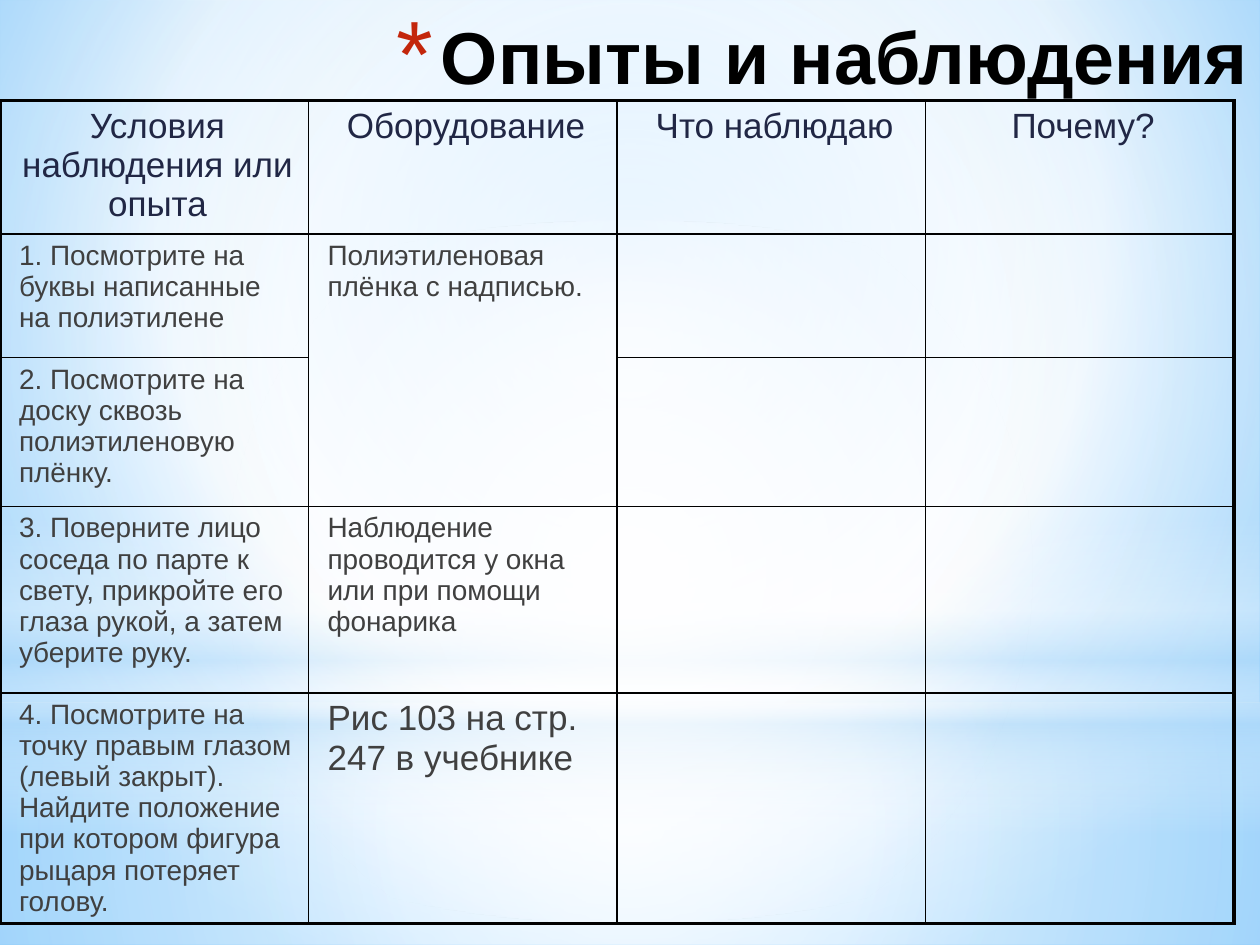
from lxml import etree
from pptx import Presentation
from pptx.dml.color import RGBColor
from pptx.enum.shapes import MSO_SHAPE
from pptx.enum.text import MSO_ANCHOR, PP_ALIGN
from pptx.oxml.ns import qn
from pptx.util import Cm, Pt

RECTANGLE, OVAL = MSO_SHAPE.RECTANGLE, MSO_SHAPE.OVAL
LEFT, CENTER, RIGHT = PP_ALIGN.LEFT, PP_ALIGN.CENTER, PP_ALIGN.RIGHT
BOTTOM = MSO_ANCHOR.BOTTOM

BLACK = RGBColor(0x00, 0x00, 0x00)
NAVY = RGBColor(0x21, 0x27, 0x45)
GRAY = RGBColor(0x40, 0x40, 0x40)
RED = RGBColor(0xC3, 0x26, 0x0C)
WHITE = RGBColor(0xFF, 0xFF, 0xFF)
PALE_BLUE = RGBColor(0xB4, 0xDC, 0xFA)
SKY = RGBColor(0x9E, 0xD5, 0xFF)
DEEP_SKY = RGBColor(0x5B, 0xB9, 0xFF)

# Content
TITLE = "Опыты и наблюдения"
ROWS = [
    ["Условия наблюдения или опыта", "Оборудование", "Что наблюдаю", "Почему?"],
    ["1. Посмотрите на буквы написанные на полиэтилене",
     "Полиэтиленовая плёнка с надписью.", "", ""],
    ["2. Посмотрите на доску сквозь полиэтиленовую плёнку.", "", "", ""],
    ["3. Поверните лицо соседа по парте к свету, прикройте его глаза рукой, "
     "а затем уберите руку.",
     "Наблюдение проводится у окна или при помощи фонарика", "", ""],
    ["4. Посмотрите на точку правым глазом (левый закрыт). Найдите положение "
     "при котором фигура рыцаря потеряет голову.",
     "Рис 103 на стр. 247 в учебнике", "", ""],
]
LARGE_TEXT_CELL = (4, 1)

# Layout, in centimetres
SLIDE_WIDTH, SLIDE_HEIGHT = 25.4, 19.05
TABLE_TOP, COLUMN_WIDTH = 2.03, 6.22
ROW_HEIGHTS = [2.69, 2.49, 3, 3.76, 4.62]
INNER_LINE, OUTER_LINE = 1, 2.25

# Gradients: stops are (position %, colour, opacity %)
CENTRE = (50, 50, 50, 50)
BACKGROUND_STOPS = [(0, SKY, 100), (60, WHITE, 100), (100, DEEP_SKY, 100)]
BACKGROUND_FOCUS = (20, 10, 20, 60)
BACKDROPS = [  # preset, top, height, focus (None = vertical), stops
    (RECTANGLE, 14.17, 4.88, CENTRE,
     [(0, WHITE, 91), (37, WHITE, 76), (100, PALE_BLUE, 79)]),
    (RECTANGLE, 0, 14.17, CENTRE,
     [(0, WHITE, 89), (48, WHITE, 62), (100, PALE_BLUE, 79)]),
    (RECTANGLE, 10.46, 6.35, None,
     [(0, WHITE, 0), (29, WHITE, 30), (45, PALE_BLUE, 40),
      (55, WHITE, 26), (65, PALE_BLUE, 60), (100, WHITE, 0)]),
    (OVAL, 4.45, 14.17, CENTRE, [(0, WHITE, 100), (56, WHITE, 0)]),
]


def add_element(parent, tag, **attributes):
    element = etree.SubElement(parent, qn(tag))
    for name, value in attributes.items():
        element.set(name, str(value))
    return element


def apply_gradient(fill, properties, stops, focus):
    """Replace the solid fill in properties by a gradient."""
    fill.solid()
    gradient = etree.Element(qn("a:gradFill"), rotWithShape="1")
    stop_list = add_element(gradient, "a:gsLst")
    for position, color, opacity in stops:
        stop = add_element(stop_list, "a:gs", pos=position * 1000)
        color_element = add_element(stop, "a:srgbClr", val=color)
        add_element(color_element, "a:alpha", val=opacity * 1000)
    if focus:
        circle = add_element(gradient, "a:path", path="circle")
        sides = {side: value * 1000 for side, value in zip("ltrb", focus)}
        add_element(circle, "a:fillToRect", **sides)
    else:
        add_element(gradient, "a:lin", ang=90 * 60000, scaled=0)
    properties.replace(properties.find(qn("a:solidFill")), gradient)


def set_font(font, **values):
    color = values.pop("color")
    for name, value in values.items():
        setattr(font, name, value)
    font.color.rgb = color


def set_borders(cell, widths):
    properties = cell._tc.get_or_add_tcPr()
    for index, (side, width) in enumerate(widths.items()):
        line = etree.Element(qn(f"a:ln{side}"), w=str(int(Pt(width))))
        solid = add_element(line, "a:solidFill")
        add_element(solid, "a:srgbClr", val=BLACK)
        properties.insert(index, line)


presentation = Presentation()
presentation.slide_width, presentation.slide_height = Cm(SLIDE_WIDTH), Cm(SLIDE_HEIGHT)
slide = presentation.slides.add_slide(presentation.slide_layouts[5])

# Background and light effects
background_fill = slide.background.fill
background_fill.solid()
apply_gradient(background_fill, slide.element.find(".//" + qn("p:bgPr")),
               BACKGROUND_STOPS, BACKGROUND_FOCUS)
for preset, top, height, focus, stops in BACKDROPS:
    shape = slide.shapes.add_shape(preset, 0, Cm(top), Cm(SLIDE_WIDTH), Cm(height))
    shape.shadow.inherit = False
    shape.line.fill.background()
    apply_gradient(shape.fill, shape.element.spPr, stops, focus)

# Title with an asterisk bullet, brought in front of the light effects
title = slide.shapes.title
title.element.getparent().append(title.element)
title.left, title.top, title.width, title.height = Cm(7.32), 0, Cm(18.08), Cm(2.13)
title.text_frame.text = TITLE
title.text_frame.word_wrap = True
title.text_frame.vertical_anchor = BOTTOM
paragraph = title.text_frame.paragraphs[0]
paragraph.alignment = RIGHT
properties = paragraph._p.get_or_add_pPr()
properties.set("marL", str(Cm(0.89)))
properties.set("indent", str(-Cm(0.89)))
add_element(add_element(properties, "a:buClr"), "a:srgbClr", val=RED)
add_element(properties, "a:buSzPct", val=128000)
add_element(properties, "a:buFont", typeface="Arial")
add_element(properties, "a:buChar", char="*")
set_font(paragraph.runs[0].font, name="Arial", size=Pt(42), bold=True, color=BLACK)

# Table
row_count, column_count = len(ROWS), len(ROWS[0])
table = slide.shapes.add_table(
    row_count, column_count, 0, Cm(TABLE_TOP),
    Cm(COLUMN_WIDTH * column_count), Cm(sum(ROW_HEIGHTS))).table
table.first_row = table.horz_banding = False
for column in table.columns:
    column.width = Cm(COLUMN_WIDTH)
for row, height in zip(table.rows, ROW_HEIGHTS):
    row.height = Cm(height)
table.cell(1, 1).merge(table.cell(2, 1))

for row_index, texts in enumerate(ROWS):
    header = row_index == 0
    for column_index, text in enumerate(texts):
        cell = table.cell(row_index, column_index)
        cell.fill.background()
        on_edge = {"L": column_index == 0, "R": column_index == column_count - 1,
                   "T": header, "B": row_index == row_count - 1}
        set_borders(cell, {side: OUTER_LINE if edge else INNER_LINE
                           for side, edge in on_edge.items()})
        if not text:
            continue
        cell.text = text
        paragraph = cell.text_frame.paragraphs[0]
        paragraph.alignment = CENTER if header else LEFT
        paragraph._p.get_or_add_pPr().set("marL", str(Cm(0.13)))
        large = header or (row_index, column_index) == LARGE_TEXT_CELL
        set_font(paragraph.runs[0].font, name="Arial", size=Pt(20 if large else 16),
                 bold=False, color=NAVY if header else GRAY)

presentation.save("out.pptx")
